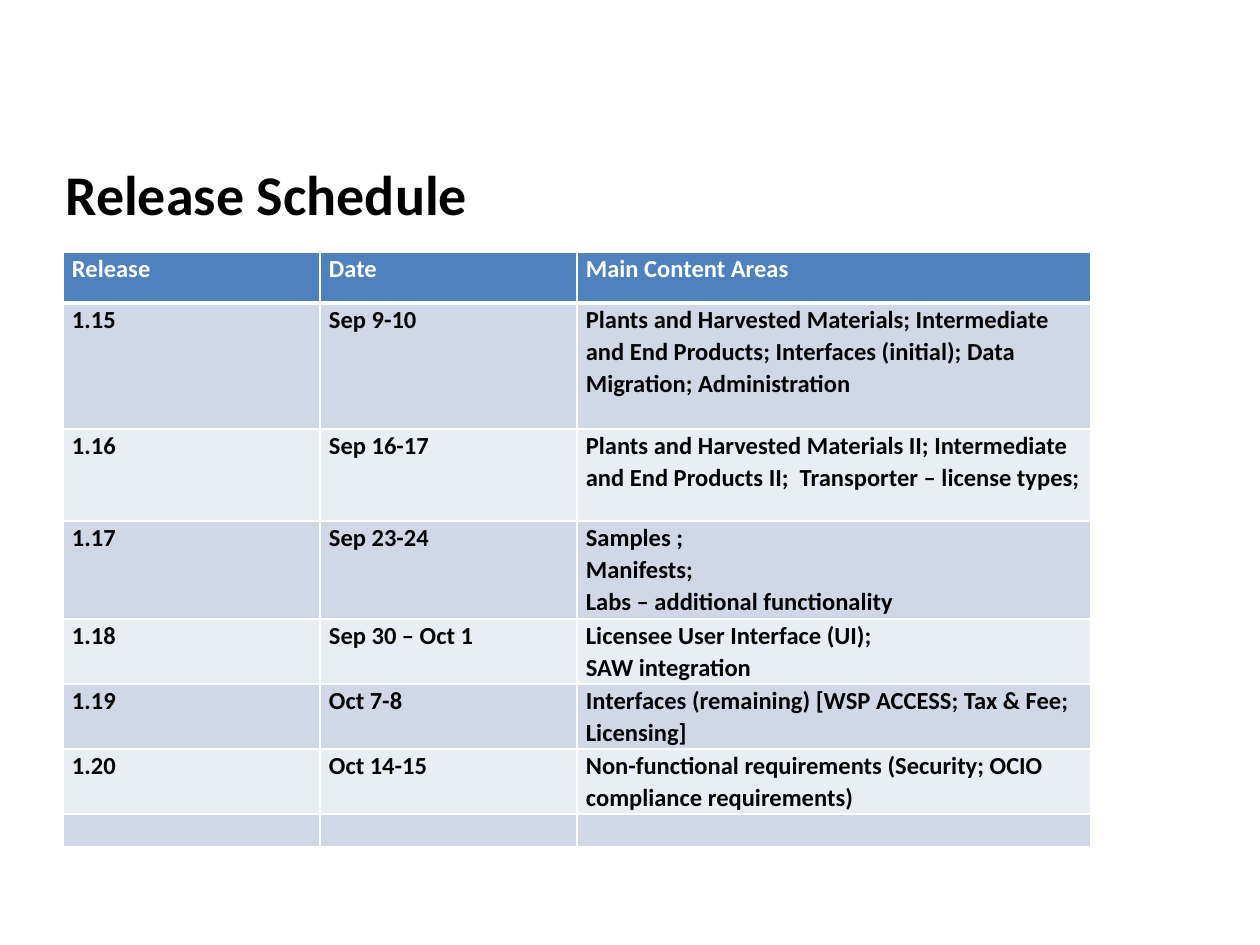
from lxml.etree import SubElement
from pptx import Presentation
from pptx.dml.color import RGBColor
from pptx.enum.text import MSO_ANCHOR
from pptx.oxml.ns import qn
from pptx.util import Inches, Pt

PX = Inches(1) / 126
WHITE = RGBColor(0xFF, 0xFF, 0xFF)
BLACK = RGBColor(0x00, 0x00, 0x00)
HEADER_BLUE = RGBColor(0x4F, 0x81, 0xBD)
BANDS = [RGBColor(0xD0, 0xD8, 0xE8), RGBColor(0xE9, 0xED, 0xF4)]
FONT = "Calibri"
TABLE_SIZE = Pt(14)
COLUMN_WIDTHS = [257, 257, 514]
ROW_HEIGHTS = [51, 126, 92, 98, 65, 65, 65, 33]
RELEASES = [
    ("Release", "Date", "Main Content Areas"),
    ("1.15", "Sep 9-10", "Plants and Harvested Materials; Intermediate and End Products; "
                         "Interfaces (initial); Data Migration; Administration"),
    ("1.16", "Sep 16-17", "Plants and Harvested Materials II; Intermediate and End Products II;  "
                          "Transporter – license types;"),
    ("1.17", "Sep 23-24", "Samples ;\nManifests;\nLabs – additional functionality"),
    ("1.18", "Sep 30 – Oct 1", "Licensee User Interface (UI);\nSAW integration"),
    ("1.19", "Oct 7-8", "Interfaces (remaining) [WSP ACCESS; Tax & Fee; Licensing]"),
    ("1.20", "Oct 14-15", "Non-functional requirements (Security; OCIO compliance requirements)"),
    ("", "", ""),
]


def px(length):
    return round(length * PX)


def set_attributes(target, values):
    for name, value in values.items():
        setattr(target, name, value)


def style_runs(paragraph, size, color):
    for run in paragraph.runs:
        set_attributes(run.font, {"name": FONT, "size": size, "bold": True})
        run.font.color.rgb = color


def add_title(slide, text):
    box = slide.shapes.add_textbox(px(53), px(147), px(1207), px(93))
    set_attributes(box.text_frame, {
        "word_wrap": True, "vertical_anchor": MSO_ANCHOR.MIDDLE, "text": text})
    style_runs(box.text_frame.paragraphs[0], Pt(32), BLACK)


def set_borders(cell, bottom_width):
    """Draw white cell borders; they must precede the fill in the XML."""
    properties = cell._tc.get_or_add_tcPr()
    for side in ("lnL", "lnR", "lnT", "lnB"):
        width = bottom_width if side == "lnB" else Pt(1)
        line = SubElement(properties, qn(f"a:{side}"), w=str(width))
        fill = SubElement(line, qn("a:solidFill"))
        SubElement(fill, qn("a:srgbClr"), val=str(WHITE))


def fill_cell(cell, text, fill, color, bottom_width):
    set_attributes(cell, {
        "text": text, "margin_left": px(9), "margin_right": px(9),
        "margin_top": 0, "margin_bottom": 0})
    set_borders(cell, bottom_width)
    cell.fill.solid()
    cell.fill.fore_color.rgb = fill
    for paragraph in cell.text_frame.paragraphs:
        paragraph.line_spacing = 1.07
        style_runs(paragraph, TABLE_SIZE, color)
        if not text:
            # An empty row keeps its height from the end-of-paragraph size.
            paragraph._p.get_or_add_endParaRPr().set("sz", str(TABLE_SIZE.centipoints))


def add_schedule(slide):
    table = slide.shapes.add_table(
        len(ROW_HEIGHTS), len(COLUMN_WIDTHS), px(63), px(252),
        px(sum(COLUMN_WIDTHS)), px(sum(ROW_HEIGHTS))).table
    for column, width in zip(table.columns, COLUMN_WIDTHS):
        column.width = px(width)
    for index, (row, height, texts) in enumerate(zip(table.rows, ROW_HEIGHTS, RELEASES)):
        row.height = px(height)
        if index == 0:
            look = (HEADER_BLUE, WHITE, Pt(3))
        else:
            look = (BANDS[(index - 1) % 2], BLACK, Pt(1))
        for cell, text in zip(row.cells, texts):
            fill_cell(cell, text, *look)
            if index == 1:
                cell._tc.tcPr.find(qn("a:lnT")).set("w", str(Pt(3)))


def main():
    presentation = Presentation()
    set_attributes(presentation, {"slide_width": px(1260), "slide_height": px(945)})
    slide = presentation.slides.add_slide(presentation.slide_layouts[6])
    add_schedule(slide)
    add_title(slide, "Release Schedule")
    presentation.save("out.pptx")


if __name__ == "__main__":
    main()
